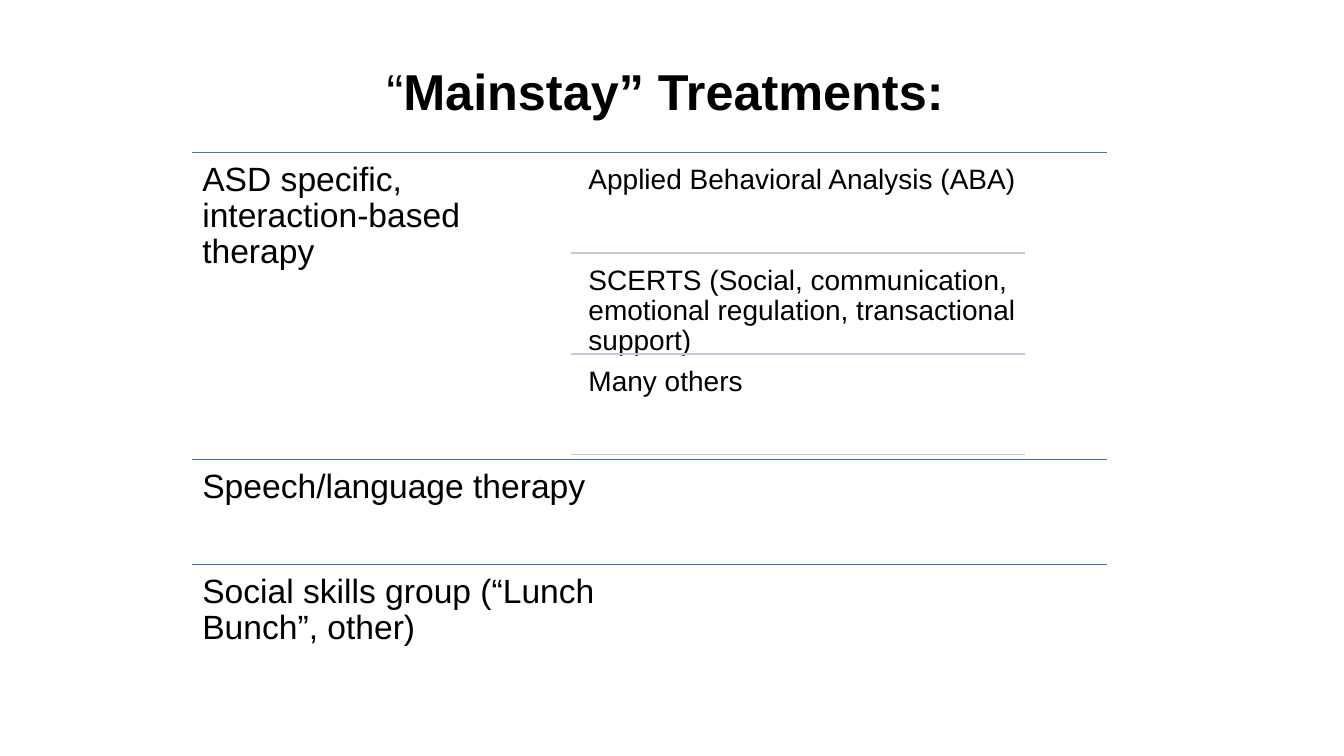
import pptx
import pptx.util
import pptx.dml.color
import pptx.enum.shapes
import pptx.enum.text
import pptx.oxml.ns
import lxml.etree

Cm, Pt = pptx.util.Cm, pptx.util.Pt

# Content
TITLE = [("“", False), ("Mainstay” Treatments: ", True)]
# text, top, width, height (cm)
TREATMENTS = [
    ("ASD specific, interaction-based therapy", 3.84, 9.55, 6.55),
    ("Speech/language therapy", 11.58, 12.67, 2.64),
    ("Social skills group (“Lunch Bunch”, other)", 14.22, 13.18, 2.9),
]
# text, width (cm)
THERAPIES = [
    ("Applied Behavioral Analysis (ABA)", 11.2),
    ("SCERTS (Social, communication, emotional regulation, transactional support)", 13.23),
    ("Many others", 11.2),
]
COLORS = {"text": "000000", "main": "4472C4", "sub": "C1C9E4"}

# Layout (cm)
MAIN_LEFT, MAIN_RIGHT = 4.85, 27.89
SUB_LEFT, SUB_RIGHT, SUB_TEXT_LEFT = 14.4, 25.83, 14.63
SUB_STEP, SUB_GAP = 2.54, 0.13


def rgb(name):
    return pptx.dml.color.RGBColor.from_string(COLORS[name])


def add_text(s, box, runs, size, inset=None):
    sp = s.shapes.add_textbox(*map(Cm, box))
    tf = sp.text_frame
    tf.word_wrap = True
    p = tf.paragraphs[0]
    p.line_spacing = 0.9
    if inset is not None:
        tf.margin_left = tf.margin_right = Cm(inset)
        tf.margin_top = tf.margin_bottom = Cm(inset)
    for text, bold in runs:
        r = p.add_run()
        r.text = text
        r.font.name = "Arial"
        r.font.size = Pt(size)
        r.font.bold = bold
        r.font.color.rgb = rgb("text")
    return tf


def add_rule(s, left, right, y, color):
    line = s.shapes.add_connector(pptx.enum.shapes.MSO_CONNECTOR.STRAIGHT,
                                  Cm(left), Cm(y), Cm(right), Cm(y))
    line.line.color.rgb = rgb(color)
    line.line.width = Pt(1)
    lxml.etree.SubElement(line._element.spPr, pptx.oxml.ns.qn("a:effectLst"))


def main():
    prs = pptx.Presentation()
    prs.slide_width, prs.slide_height = Cm(33.87), Cm(19.05)
    s = prs.slides.add_slide(prs.slide_layouts[6])

    # Treatments, each under a full-width rule
    for text, top, width, height in TREATMENTS:
        add_rule(s, MAIN_LEFT, MAIN_RIGHT, top, "main")
        add_text(s, (MAIN_LEFT, top, width, height), [(text, False)], 24, 0.25)

    # Therapies of the first treatment, each above a short rule
    for i, (text, width) in enumerate(THERAPIES):
        top = TREATMENTS[0][1] + SUB_GAP + i * SUB_STEP
        box = (SUB_TEXT_LEFT, top, width, SUB_STEP - SUB_GAP)
        add_text(s, box, [(text, False)], 20, 0.2)
        add_rule(s, SUB_LEFT, SUB_RIGHT, top + SUB_STEP - SUB_GAP, "sub")

    # Title
    tf = add_text(s, (7.34, 0.33, 19.2, 4.09), TITLE, 36)
    tf.vertical_anchor = pptx.enum.text.MSO_ANCHOR.MIDDLE
    tf.paragraphs[0].alignment = pptx.enum.text.PP_ALIGN.CENTER

    prs.save("out.pptx")


if __name__ == "__main__":
    main()
